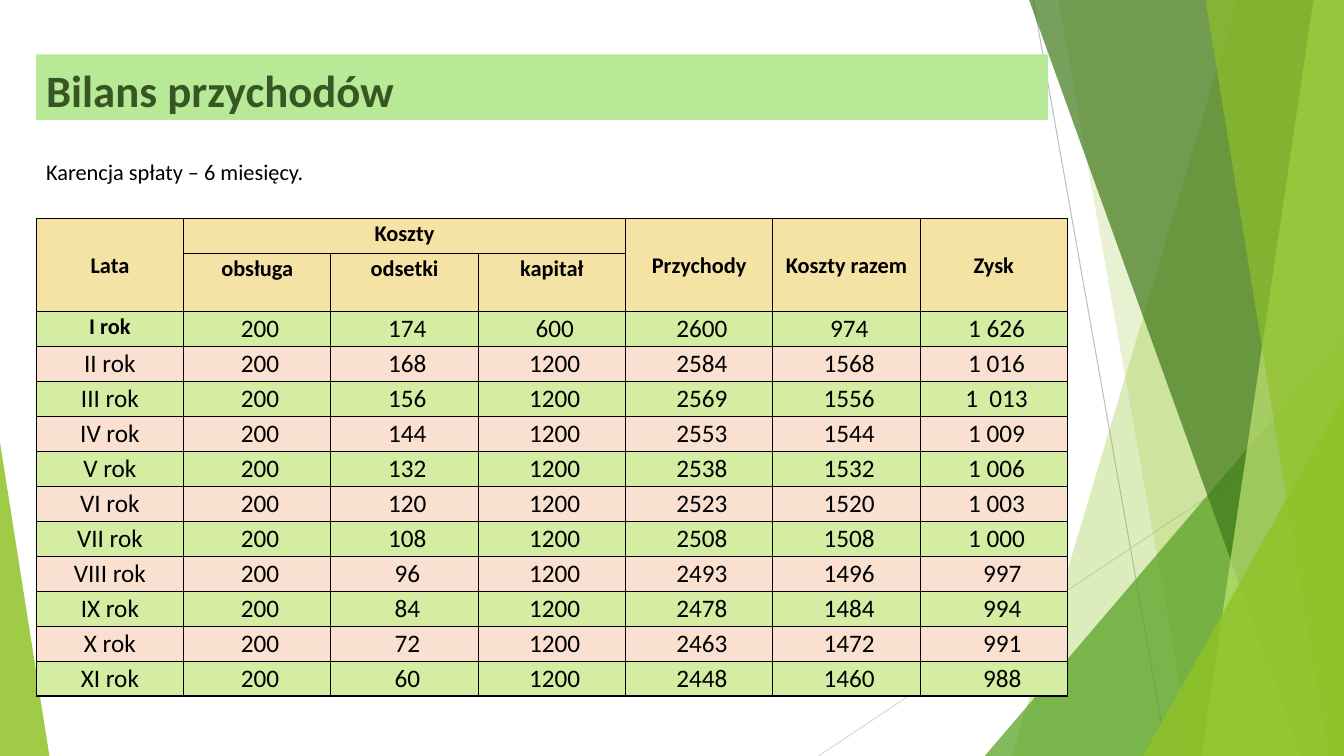
from pptx import Presentation
from pptx.dml.color import RGBColor
from pptx.enum.shapes import MSO_CONNECTOR as CONN, MSO_SHAPE as SHAPE
from pptx.enum.text import MSO_ANCHOR as ANCHOR, MSO_AUTO_SIZE as AUTO, PP_ALIGN as ALIGN
from pptx.oxml import parse_xml
from pptx.oxml.ns import nsdecls, qn
from pptx.oxml.xmlchemy import OxmlElement
from pptx.util import Pt

BLACK = RGBColor(0x00, 0x00, 0x00)
SILVER = RGBColor(0xBF, 0xBF, 0xBF)
PALE_GREY = RGBColor(0xD9, 0xD9, 0xD9)
LIME = RGBColor(0x90, 0xC2, 0x26)
GREEN = RGBColor(0x54, 0xA0, 0x21)
FOREST = RGBColor(0x3F, 0x78, 0x19)
LIGHT_LIME = RGBColor(0xC0, 0xE4, 0x74)
TITLE_FILL = RGBColor(0xB7, 0xE9, 0x96)
TITLE_TEXT = RGBColor(0x38, 0x56, 0x23)
HEAD_FILL = RGBColor(0xF5, 0xE3, 0xA5)
ROW_FILLS = RGBColor(0xD5, 0xED, 0xA2), RGBColor(0xFA, 0xE0, 0xD1)

WIDTH, HEIGHT = 960, 540
LEFT = 25.92
COLS = 7
ROW_H = 24.98

HEADERS = [
    (0, 0, 1, 0, "Lata"), (0, 1, 0, 3, "Koszty"), (0, 4, 1, 4, "Przychody"),
    (0, 5, 1, 5, "Koszty razem"), (0, 6, 1, 6, "Zysk"),
    (1, 1, 1, 1, "obsługa"), (1, 2, 1, 2, "odsetki"), (1, 3, 1, 3, "kapitał"),
]
YEARS = [
    ("I rok", "200", "174", "600", "2600", "974", "1 626"),
    ("II rok", "200", "168", "1200", "2584", "1568", "1 016"),
    ("III rok", "200", "156", "1200", "2569", "1556", "1  013"),
    ("IV rok", "200", "144", "1200", "2553", "1544", "1 009"),
    ("V rok", "200", "132", "1200", "2538", "1532", "1 006"),
    ("VI rok", "200", "120", "1200", "2523", "1520", "1 003"),
    ("VII rok", "200", "108", "1200", "2508", "1508", "1 000"),
    ("VIII rok", "200", "96", "1200", "2493", "1496", "997"),
    ("IX rok", "200", "84", "1200", "2478", "1484", "994"),
    ("X rok", "200", "72", "1200", "2463", "1472", "991"),
    ("XI rok", "200", "60", "1200", "2448", "1460", "988"),
]


class Deck:
    """Holds the style and the current slide and draws each kind of element."""

    font = "Calibri"
    spacing = 1.07

    def __init__(self):
        self.prs = Presentation()
        self.prs.slide_width, self.prs.slide_height = Pt(WIDTH), Pt(HEIGHT)
        self.s = self.prs.slides.add_slide(self.prs.slide_layouts[6])

    def text(self, tf, text, size=16, bold=False, color=BLACK, align=ALIGN.LEFT, after=0):
        p = tf.paragraphs[0]
        p.alignment, p.line_spacing, p.space_after = align, self.spacing, Pt(after)
        r = p.add_run()
        r.text = text
        r.font.name, r.font.size, r.font.bold = self.font, Pt(size), bold
        r.font.color.rgb = color

    def line(self, x1, y1, x2, y2, color):
        c = self.s.shapes.add_connector(CONN.STRAIGHT, Pt(x1), Pt(y1), Pt(x2), Pt(y2))
        c.line.color.rgb, c.line.width = color, Pt(0.75)
        c._element.spPr.append(OxmlElement("a:effectLst"))

    def paint(self, sp, color, opacity=100):
        sp.shadow.inherit = False
        sp.fill.solid()
        sp.fill.fore_color.rgb = color
        sp.line.fill.background()
        if opacity < 100:
            alpha = OxmlElement("a:alpha")
            alpha.set("val", str(opacity * 1000))
            sp._element.spPr.find(".//" + qn("a:srgbClr")).append(alpha)

    def shard(self, top_x, bottom_x, color, opacity):
        fb = self.s.shapes.build_freeform(Pt(top_x), 0)
        corners = (WIDTH, 0), (WIDTH, HEIGHT), (bottom_x, HEIGHT)
        fb.add_line_segments([(Pt(x), Pt(y)) for x, y in corners])
        self.paint(fb.convert_to_shape(), color, opacity)

    def triangle(self, x, y, w, apex, color, opacity):
        sp = self.s.shapes.add_shape(SHAPE.ISOSCELES_TRIANGLE, Pt(x), Pt(y), Pt(w), Pt(HEIGHT - y))
        sp.adjustments[0] = apex
        self.paint(sp, color, opacity)

    def title(self, text, x, y, w, h):
        sp = self.s.shapes.add_shape(SHAPE.RECTANGLE, Pt(x), Pt(y), Pt(w), Pt(h))
        self.paint(sp, TITLE_FILL)
        tf = sp.text_frame
        tf.word_wrap, tf.auto_size, tf.vertical_anchor = True, AUTO.SHAPE_TO_FIT_TEXT, ANCHOR.TOP
        self.text(tf, text, size=32, bold=True, color=TITLE_TEXT, after=8)

    def note(self, text, x, y, w, h):
        tf = self.s.shapes.add_textbox(Pt(x), Pt(y), Pt(w), Pt(h)).text_frame
        tf.word_wrap, tf.auto_size = False, AUTO.SHAPE_TO_FIT_TEXT
        self.text(tf, text, after=8)

    def cell(self, cell, text, fill, indent=0, **style):
        cell.margin_left, cell.margin_right = Pt(5 + indent), Pt(5)
        cell.margin_top = cell.margin_bottom = 0
        cell.fill.solid()
        cell.fill.fore_color.rgb = fill
        self.text(cell.text_frame, text, align=ALIGN.CENTER, **style)

    def borders(self, cell):
        tcPr = cell._tc.get_or_add_tcPr()
        for side in ("lnL", "lnR", "lnT", "lnB"):
            tcPr.append(parse_xml(
                f'<a:{side} {nsdecls("a")} w="{Pt(1)}"><a:solidFill>'
                f'<a:srgbClr val="{BLACK}"/></a:solidFill></a:{side}>'))

    def table(self, x, y, w):
        rows = len(YEARS) + 2
        tbl = self.s.shapes.add_table(rows, COLS, Pt(x), Pt(y), Pt(w), Pt(ROW_H * rows)).table
        tbl.first_row = tbl.horz_banding = False
        for col in tbl.columns:
            col.width = Pt(w / COLS)
        for row in tbl.rows:
            row.height = Pt(ROW_H)
        tbl.rows[1].height = Pt(41.3)
        for cell in tbl.iter_cells():
            self.borders(cell)
        for top, left, bottom, right, text in HEADERS:
            cell = tbl.cell(top, left)
            if (top, left) != (bottom, right):
                cell.merge(tbl.cell(bottom, right))
            self.cell(cell, text, HEAD_FILL, bold=True)
            cell.vertical_anchor = ANCHOR.MIDDLE if bottom > top else ANCHOR.TOP
        for i, year in enumerate(YEARS):
            for j, text in enumerate(year):
                first = i == j == 0
                short_profit = j == COLS - 1 and len(text) == 3
                indent = 12 if short_profit else 4 if j else 0
                self.cell(tbl.cell(i + 2, j), text, ROW_FILLS[i % 2], indent,
                          size=16 if first else 18, bold=first)


def main():
    d = Deck()
    d.line(738, 0, 833.8, HEIGHT, SILVER)
    d.line(WIDTH, 290.2, 584.6, HEIGHT, PALE_GREY)
    d.shard(884.2, 722.9, LIME, 30)
    d.shard(756, 851.8, LIME, 20)
    d.triangle(703.4, 239.8, 256.6, 1, GREEN, 72)
    d.shard(735.1, 929.5, FOREST, 70)
    d.shard(938.2, 858.2, LIGHT_LIME, 70)
    d.shard(861.1, 949, LIME, 65)
    d.triangle(816.5, 283, 143.5, 1, LIME, 80)
    d.triangle(0, 316.1, 35.3, 0, LIME, 85)
    d.title("Bilans przychodów", LEFT, 38.88, 722.9, 46.8)
    d.table(LEFT, 156.24, 736.6)
    d.note("Karencja spłaty – 6 miesięcy.", LEFT, 108, 208, 27.4)
    d.prs.save("out.pptx")


if __name__ == "__main__":
    main()
